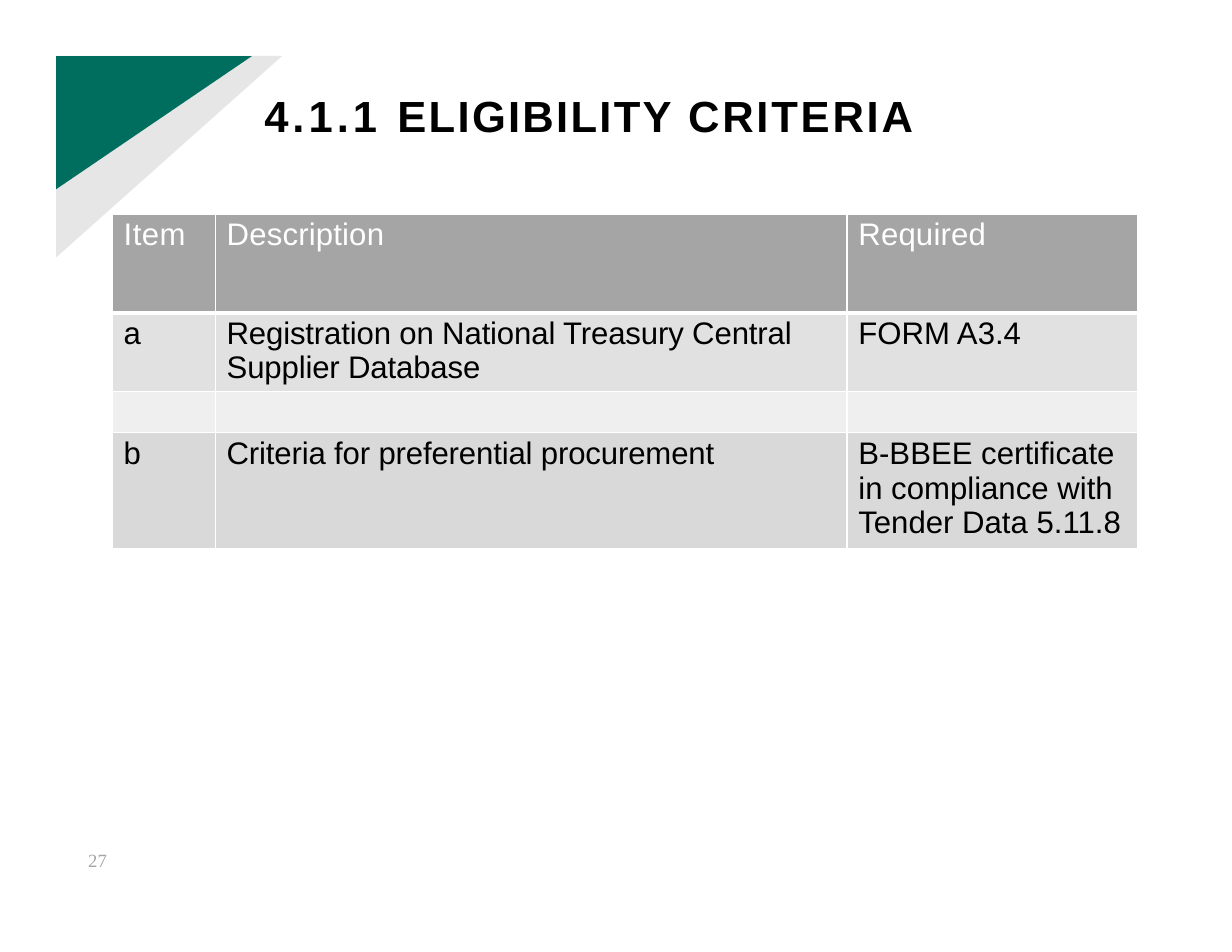
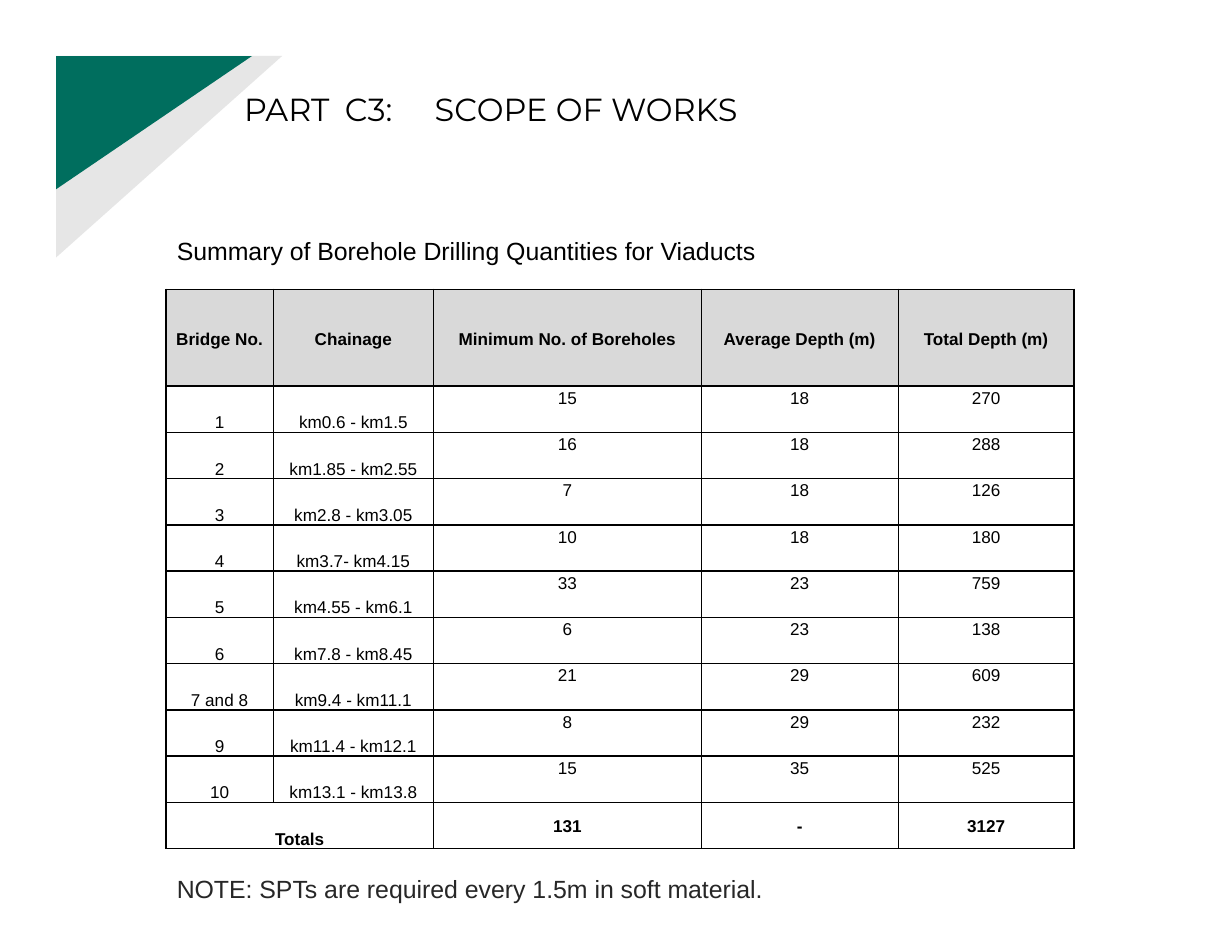
"""Build two tender briefing slides: eligibility criteria and borehole quantities."""
from dataclasses import dataclass

from lxml import etree
from pptx import Presentation
from pptx.dml.color import RGBColor
from pptx.enum import text as t
from pptx.oxml import ns
from pptx.util import Pt


@dataclass(frozen=True)
class Theme:
    green: str = "006E5E"
    pale: str = "E6E6E6"
    white: str = "FFFFFF"
    black: str = "000000"
    note: str = "272727"
    grey: str = "A5A5A5"
    head: str = "D9D9D9"
    bands: tuple = ("E1E1E1", "EFEFEF", "D9D9D9")
    sans: str = "Arial"
    display: str = "Montserrat"
    serif: str = "Times New Roman"
    title: float = 28
    scope_title: float = 20.5
    criteria: float = 20
    caption: float = 16
    number: float = 12
    quantity: float = 11


THEME = Theme()
LEFT, CENTER, JUSTIFY = t.PP_ALIGN.LEFT, t.PP_ALIGN.CENTER, t.PP_ALIGN.JUSTIFY
TOP, MIDDLE, BOTTOM = t.MSO_ANCHOR.TOP, t.MSO_ANCHOR.MIDDLE, t.MSO_ANCHOR.BOTTOM

CORNER = [
    (THEME.pale, [(36, 36), (181.4, 36), (36, 165.6)]),
    (THEME.green, [(36, 36), (162, 36), (36, 121.7)]),
]

ELIGIBILITY_TITLE = [("4.1.1 ", 2.6), ("ELIGIBILITY ", 1.5), ("CRITERIA", 1.8)]
PAGE_NUMBER = "27"
CRITERIA = [
    ("Item", "Description", "Required"),
    ("a", "Registration on National Treasury Central Supplier Database", "FORM A3.4"),
    ("", "", ""),
    ("b", "Criteria for preferential procurement",
     "B-BBEE certificate in compliance with Tender Data 5.11.8"),
]
CRITERIA_COLUMNS = [66.2, 406.1, 186.5]
CRITERIA_ROWS = [63.5, 50.8, 26.4, 74]

SCOPE_TITLE = "PART\tC3:\tSCOPE OF WORKS"
SCOPE_TABS = [64.8, 122.6]
SUMMARY = "Summary of Borehole Drilling Quantities for Viaducts"
NOTE = "NOTE: SPTs are required every 1.5m in soft material."
QUANTITIES = [
    ("Bridge No.", "Chainage", "Minimum No. of Boreholes", "Average Depth (m)", "Total Depth (m)"),
    ("1", "km0.6 - km1.5", "15", "18", "270"),
    ("2", "km1.85 - km2.55", "16", "18", "288"),
    ("3", "km2.8 - km3.05", "7", "18", "126"),
    ("4", "km3.7- km4.15", "10", "18", "180"),
    ("5", "km4.55 - km6.1", "33", "23", "759"),
    ("6", "km7.8 - km8.45", "6", "23", "138"),
    ("7 and 8", "km9.4 - km11.1", "21", "29", "609"),
    ("9", "km11.4 - km12.1", "8", "29", "232"),
    ("10", "km13.1 - km13.8", "15", "35", "525"),
    ("Totals", "", "131", "-", "3127"),
]
QUANTITY_COLUMNS = [69.1, 103, 172.1, 126.7, 113]
QUANTITY_ROWS = [62.2] + [29.75] * 10


def write(frame, content, size, font=THEME.sans, color=THEME.black, bold=False, spacing=0,
          align=LEFT, line=None, after=None, tabs=()):
    """Fill the first paragraph with a string or a list of (text, spacing) runs."""
    paragraph = frame.paragraphs[0]
    if tabs:
        stops = etree.SubElement(paragraph._p.get_or_add_pPr(), ns.qn("a:tabLst"))
        for stop in tabs:
            etree.SubElement(stops, ns.qn("a:tab"), pos=str(Pt(stop)), algn="l")
    paragraph.alignment = align
    if line:
        paragraph.line_spacing = line
    if after:
        paragraph.space_after = Pt(after)
    for words, gap in [(content, spacing)] if isinstance(content, str) else content:
        run = paragraph.add_run()
        run.text = words
        run.font.size, run.font.name, run.font.bold = Pt(size), font, bold
        run.font.color.rgb = RGBColor.from_string(color)
        if gap:
            run._r.get_or_add_rPr().set("spc", str(round(gap * 100)))


def add_text(slide, box, content, insets=(7.2, 3.6, 7.2, 3.6), **style):
    """Place a wrapped text box at (left, top, width, height)."""
    frame = slide.shapes.add_textbox(*map(Pt, box)).text_frame
    frame.word_wrap = True
    frame.margin_left, frame.margin_top, frame.margin_right, frame.margin_bottom = map(Pt, insets)
    write(frame, content, **style)


def add_corner(slide):
    """Draw the two-tone corner shared by every slide."""
    for color, points in CORNER:
        start, *rest = [(Pt(x), Pt(y)) for x, y in points]
        builder = slide.shapes.build_freeform(*start)
        builder.add_line_segments(rest, close=True)
        corner = builder.convert_to_shape()
        corner.shadow.inherit = False
        corner.fill.solid()
        corner.fill.fore_color.rgb = RGBColor.from_string(color)
        corner.line.fill.background()


def set_borders(cell, color, widths):
    """Draw the left, right, top and bottom borders of a cell."""
    properties = cell._tc.get_or_add_tcPr()
    for place, (side, width) in enumerate(zip("LRTB", widths)):
        border = etree.Element(ns.qn(f"a:ln{side}"), w=str(Pt(width)))
        fill = etree.SubElement(border, ns.qn("a:solidFill"))
        etree.SubElement(fill, ns.qn("a:srgbClr"), val=color)
        properties.insert(place, border)


def add_grid(slide, corner, rows, columns, heights, look):
    """Add a table whose cells are formatted by look(row, column)."""
    grid = slide.shapes.add_table(len(rows), len(columns), *map(Pt, corner),
                                  Pt(sum(columns)), Pt(sum(heights))).table
    for column, width in zip(grid.columns, columns):
        column.width = Pt(width)
    for row, height in zip(grid.rows, heights):
        row.height = Pt(height)
    for r, row in enumerate(rows):
        for c, words in enumerate(row):
            cell, form = grid.cell(r, c), look(r, c)
            left, top, right, bottom = map(Pt, form["insets"])
            cell.margin_left, cell.margin_top = left, top
            cell.margin_right, cell.margin_bottom = right, bottom
            cell.vertical_anchor = form["anchor"]
            if form["fill"]:
                cell.fill.solid()
                cell.fill.fore_color.rgb = RGBColor.from_string(form["fill"])
            else:
                cell.fill.background()
            set_borders(cell, form["border"], form["widths"])
            if words:
                write(cell.text_frame, words, **form["style"])
    return grid


def criteria_look(r, c):
    """Format one cell of the eligibility table."""
    header = r == 0
    return dict(
        insets=(7.2, 2.2, 0, 0), anchor=TOP,
        fill=THEME.grey if header else THEME.bands[r - 1],
        border=THEME.white, widths=(1, 1, 3 if r == 1 else 1, 3 if header else 1),
        style=dict(size=THEME.criteria, color=THEME.white if header else THEME.black,
                   spacing=(0.3 if c == 0 else 0.1) if header else (-0.1 if c == 1 else 0)))


def quantity_look(r, c):
    """Format one cell of the borehole table."""
    header, totals = r == 0, r == len(QUANTITIES) - 1
    if header or (totals and c > 1):
        anchor = MIDDLE
    else:
        anchor = BOTTOM if c < 2 else TOP
    return dict(
        insets=(5, 0, 5, 0), anchor=anchor, fill=THEME.head if header else None,
        border=THEME.black, widths=(1, 1, 1, 1),
        style=dict(size=THEME.quantity, bold=header or totals, align=CENTER, line=1.15, after=8))


def add_slide(deck):
    """Add a blank slide with the shared corner."""
    slide = deck.slides.add_slide(deck.slide_layouts[6])
    add_corner(slide)
    return slide


def main():
    """Build and save the deck."""
    deck = Presentation()
    deck.slide_width, deck.slide_height = Pt(792), Pt(612)

    eligibility = add_slide(deck)
    add_text(eligibility, (169.2, 54, 464.4, 35.3), ELIGIBILITY_TITLE, insets=(0.7, 3, 0, 0),
             size=THEME.title, bold=True)
    add_text(eligibility, (54.7, 545.8, 16.6, 15.1), PAGE_NUMBER, insets=(2, 0, 0, 0),
             size=THEME.number, font=THEME.serif, color=THEME.grey, spacing=0.1, line=Pt(14.1))
    add_grid(eligibility, (72.3, 137.5), CRITERIA, CRITERIA_COLUMNS, CRITERIA_ROWS, criteria_look)

    scope = add_slide(deck)
    add_text(scope, (149.8, 54, 578.2, 32.4), SCOPE_TITLE, size=THEME.scope_title,
             font=THEME.display, tabs=SCOPE_TABS)
    quantities = add_grid(scope, (106.6, 186), QUANTITIES, QUANTITY_COLUMNS, QUANTITY_ROWS,
                          quantity_look)
    last = len(QUANTITIES) - 1
    quantities.cell(last, 0).merge(quantities.cell(last, 1))
    add_text(scope, (106.6, 145.4, 396, 28.1), SUMMARY, size=THEME.caption, line=1.15, after=8)
    add_text(scope, (106.6, 558, 455.8, 26.6), NOTE, size=THEME.caption, color=THEME.note,
             align=JUSTIFY, after=6)

    deck.save("out.pptx")


if __name__ == "__main__":
    main()
